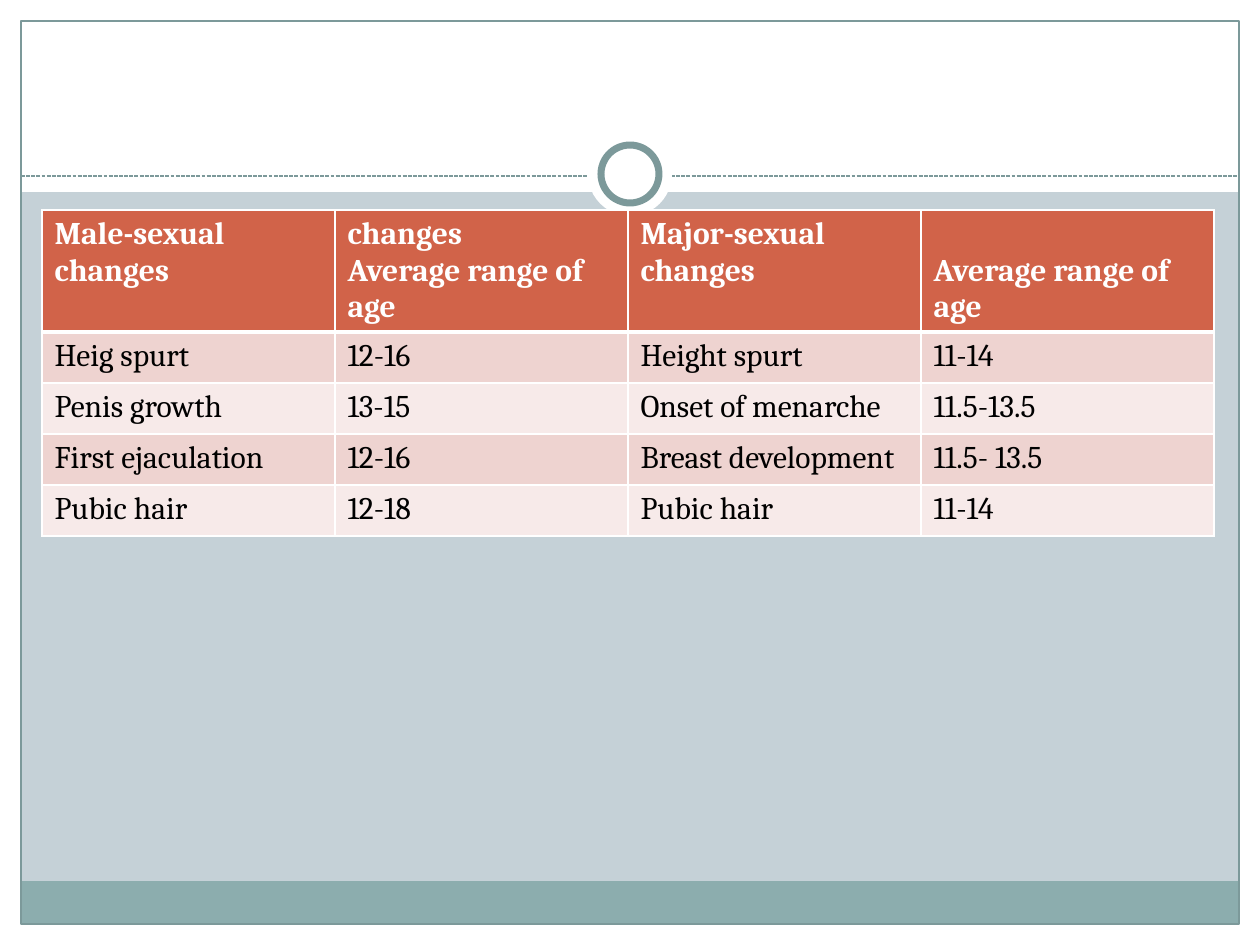
from dataclasses import dataclass

from lxml import etree
from pptx import Presentation
from pptx.dml.color import RGBColor
from pptx.enum.dml import MSO_LINE
from pptx.enum.shapes import MSO_CONNECTOR, MSO_SHAPE
from pptx.enum.text import MSO_ANCHOR
from pptx.oxml.ns import qn
from pptx.util import Emu, Pt

RECT, OVAL = MSO_SHAPE.RECTANGLE, MSO_SHAPE.OVAL
STRAIGHT = MSO_CONNECTOR.STRAIGHT
SYS_DASH = MSO_LINE.SQUARE_DOT
TOP, BOTTOM = MSO_ANCHOR.TOP, MSO_ANCHOR.BOTTOM
PX_PER_INCH = 126
SLIDE = (0, 0, 1260, 945)


@dataclass(frozen=True)
class Theme:
    background: str = "C5D1D7"
    white: str = "FFFFFF"
    black: str = "000000"
    footer: str = "8CADAE"
    outline: str = "7C999A"
    header: str = "D16349"
    bands: tuple = ("EED3D0", "F7EAE9")
    font: str = "Cambria"
    size: int = 18
    thin: float = 0.75
    ring: int = 4
    grid: int = 1
    header_rule: int = 3


THEME = Theme()

HEADERS = ["Male-sexual changes", "changes\nAverage range of age",
           "Major-sexual changes", "Average range of age"]
ROWS = [
    ["Heig spurt", "12-16", "Height spurt", "11-14"],
    ["Penis growth", "13-15", "Onset of menarche", "11.5-13.5"],
    ["First ejaculation", "12-16", "Breast development", "11.5- 13.5"],
    ["Pubic hair", "12-18", "Pubic hair", "11-14"],
]


def px(n):
    return Emu(round(n * 914400 / PX_PER_INCH))


def rgb(color):
    return RGBColor.from_string(color)


def add_shape(s, kind, box, fill=None, line=None, width=THEME.thin):
    sp = s.shapes.add_shape(kind, *map(px, box))
    sp.shadow.inherit = False
    if fill:
        sp.fill.solid()
        sp.fill.fore_color.rgb = rgb(fill)
    else:
        sp.fill.background()
    if line:
        sp.line.color.rgb = rgb(line)
        sp.line.width = Pt(width)
    else:
        sp.line.fill.background()
    return sp


def add_frame(s, box, margin=21, title_h=192, footer_h=43):
    """White margins and title area, footer band and outline."""
    x, y, w, h = box
    inner_w, inner_h = w - 2 * margin, h - 2 * margin
    for band in [
        (x, y + h - margin, w, margin),
        (x, y, w, title_h),
        (x, y, margin, h),
        (x + w - margin, y, margin, h),
    ]:
        add_shape(s, RECT, band, THEME.white)
    footer_y = y + h - margin - footer_h
    add_shape(s, RECT, (x + margin, footer_y, inner_w, footer_h), THEME.footer)
    add_shape(s, RECT, (x + margin, y + margin, inner_w, inner_h),
              line=THEME.outline)


def add_divider(s, box):
    """Dashed line across the box with a ring at its centre."""
    x, y, w, h = box
    line = s.shapes.add_connector(
        STRAIGHT, *map(px, (x, y + h // 2 + 2, x + w, y + h // 2 + 2)))
    line.line.color.rgb = rgb(THEME.outline)
    line.line.width = Pt(THEME.thin)
    line.line.dash_style = SYS_DASH
    etree.SubElement(line._element.spPr, qn("a:effectLst"))
    for size, color in [(h, None), (58, THEME.outline)]:
        ring = (x + (w - size) / 2, y + (h - size) / 2, size, size)
        add_shape(s, OVAL, ring, THEME.white, color, THEME.ring)


def set_borders(cell, top, bottom):
    tc_pr = cell._tc.get_or_add_tcPr()
    widths = {"lnL": THEME.grid, "lnR": THEME.grid, "lnT": top, "lnB": bottom}
    for tag, width in widths.items():
        ln = etree.SubElement(tc_pr, qn(f"a:{tag}"), w=str(Pt(width)))
        fill = etree.SubElement(ln, qn("a:solidFill"))
        etree.SubElement(fill, qn("a:srgbClr"), val=THEME.white)


def fill_cell(cell, text, fill, color, bold):
    cell.fill.solid()
    cell.fill.fore_color.rgb = rgb(fill)
    cell.text_frame.text = text
    for p in cell.text_frame.paragraphs:
        for r in p.runs:
            r.font.name = THEME.font
            r.font.size = Pt(THEME.size)
            r.font.bold = bold
            r.font.color.rgb = rgb(color)


def add_changes_table(s, box, header_h=122):
    x, y, w, h = box
    table = s.shapes.add_table(
        len(ROWS) + 1, len(HEADERS), *map(px, box)).table
    for col in table.columns:
        col.width = px(w / len(HEADERS))
    for i, values in enumerate([HEADERS] + ROWS):
        is_header = i == 0
        table.rows[i].height = px(
            header_h if is_header else (h - header_h) / len(ROWS))
        fill = THEME.header if is_header else THEME.bands[(i - 1) % 2]
        color = THEME.white if is_header else THEME.black
        for j, text in enumerate(values):
            cell = table.cell(i, j)
            set_borders(cell,
                        THEME.header_rule if i == 1 else THEME.grid,
                        THEME.header_rule if is_header else THEME.grid)
            fill_cell(cell, text, fill, color, is_header)
            cell.vertical_anchor = TOP
    table.cell(0, len(HEADERS) - 1).vertical_anchor = BOTTOM


def main():
    prs = Presentation()
    prs.slide_width, prs.slide_height = px(SLIDE[2]), px(SLIDE[3])
    s = prs.slides.add_slide(prs.slide_layouts[6])
    s.background.fill.solid()
    s.background.fill.fore_color.rgb = rgb(THEME.background)
    add_frame(s, SLIDE)
    add_divider(s, (21, 132, 1218, 84))
    add_changes_table(s, (42, 210, 1172, 326))
    prs.save("out.pptx")


if __name__ == "__main__":
    main()
